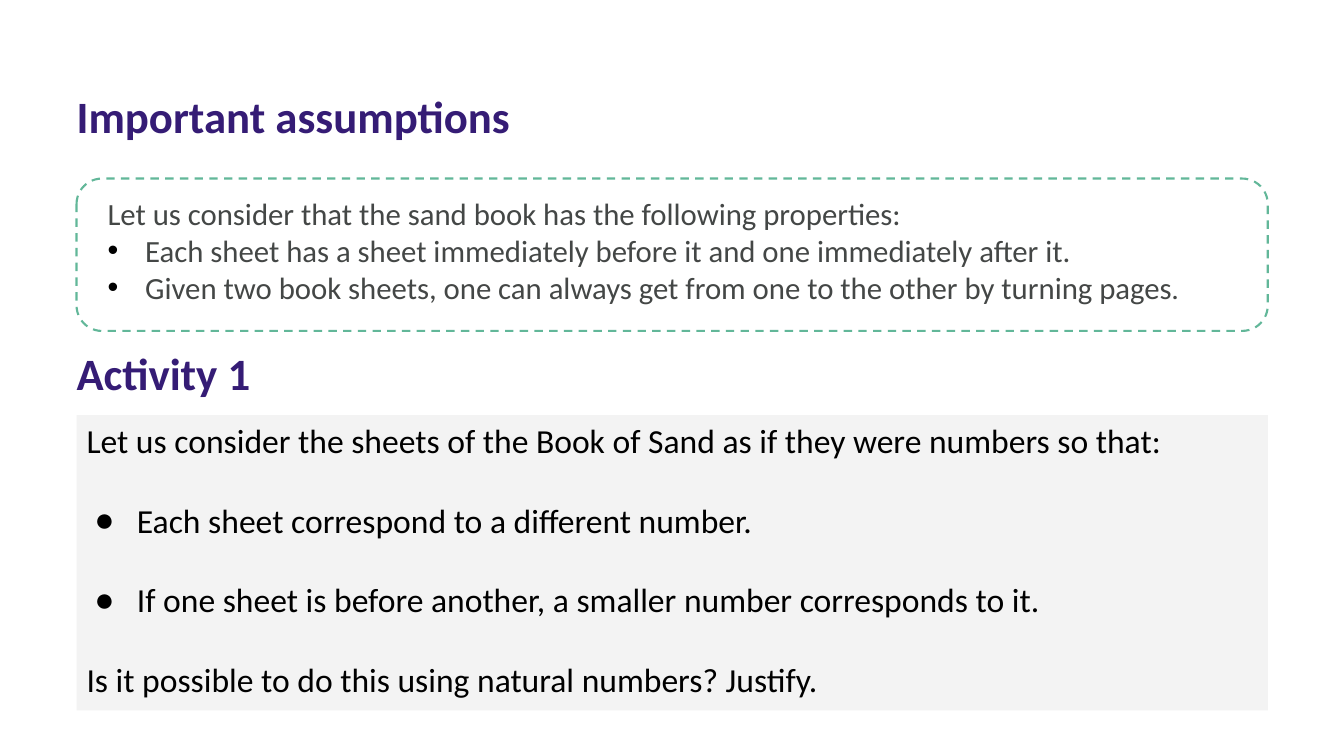
from lxml import etree
from pptx import Presentation
from pptx.dml.color import RGBColor
from pptx.enum.dml import MSO_LINE
from pptx.enum.shapes import MSO_SHAPE
from pptx.enum.text import MSO_ANCHOR, MSO_AUTO_SIZE, PP_ALIGN
from pptx.oxml.ns import qn
from pptx.util import Cm, Pt

PURPLE = RGBColor(0x35, 0x1C, 0x75)
BLACK = RGBColor(0x00, 0x00, 0x00)
GREY = RGBColor(0x44, 0x47, 0x46)
PALE = RGBColor(0xF3, 0xF3, 0xF3)
GREEN = RGBColor(0x62, 0xB7, 0x99)
ROUNDED = MSO_SHAPE.ROUNDED_RECTANGLE
DASH = MSO_LINE.DASH
TOP = MSO_ANCHOR.TOP
NO_FIT = MSO_AUTO_SIZE.NONE
LEFT, JUSTIFY = PP_ALIGN.LEFT, PP_ALIGN.JUSTIFY

ASSUMPTIONS_TITLE = [("", LEFT, ["Important assumptions"])]
ACTIVITY_TITLE = [("", LEFT, ["Activity 1"])]
ASSUMPTIONS = [
    ("", LEFT, ["Let us consider that the sand book has the following properties:"]),
    ("•", LEFT, ["Each sheet has a sheet immediately before it and one immediately after it."]),
    ("•", LEFT, ["Given two book sheets, one can always get from one to the other by turning pages", "."]),
]
ACTIVITY = [
    ("", LEFT, ["Let us consider the sheets of the Book of Sand as if they were numbers so that:"]),
    ("●", LEFT, ["Each sheet correspond to a different number."]),
    ("●", LEFT, ["If one sheet is before another, a smaller number corresponds to it."]),
    ("", JUSTIFY, ["Is it possible to do this using natural numbers? Justify."]),
]

FONTS = ["Calibri", "Karla"]
HEADING = {"size": Pt(32), "bold": True, "color": PURPLE}
PROPERTY = {"size": Pt(22), "bold": False, "color": GREY}
TASK = {"size": Pt(24), "bold": False, "color": BLACK}

PANEL_LEFT, PANEL_WIDTH = Cm(1.93), Cm(30.02)
INSET_X, INSET_Y = Cm(0.25), Cm(0.13)
HEADING_LEFT = PANEL_LEFT - INSET_X
HEADING_WIDTH, HEADING_HEIGHT = Cm(26.72), Cm(1.63)


def place(shape, left, top, width, height):
    shape.left, shape.top, shape.width, shape.height = left, top, width, height


def set_bullet(para, mark, margin, hang):
    props = para._p.get_or_add_pPr()
    props.set("marL", str(margin if mark else 0))
    props.set("indent", str(-hang if mark else 0))
    if mark:
        color = etree.SubElement(props, qn("a:buClr"))
        etree.SubElement(color, qn("a:srgbClr"), val=str(BLACK))
        etree.SubElement(props, qn("a:buChar"), char=mark)
    else:
        etree.SubElement(props, qn("a:buNone"))


def write(shape, lines, style, gap=0, margin=0, hang=0):
    frame = shape.text_frame
    settings = {
        "margin_left": INSET_X, "margin_right": INSET_X,
        "margin_top": INSET_Y, "margin_bottom": INSET_Y,
        "word_wrap": True, "auto_size": NO_FIT, "vertical_anchor": TOP,
    }
    for name, value in settings.items():
        setattr(frame, name, value)
    for number, (mark, align, pieces) in enumerate(lines):
        para = frame.add_paragraph() if number else frame.paragraphs[0]
        set_bullet(para, mark, margin, hang)
        para.alignment = align
        para.line_spacing = 1.0
        para.space_before = Pt(gap if number else 0)
        para.space_after = Pt(0)
        for piece, font in zip(pieces, FONTS):
            span = para.add_run()
            span.text = piece
            span.font.name = font
            span.font.size = style["size"]
            span.font.bold = style["bold"]
            span.font.color.rgb = style["color"]


def main():
    deck = Presentation()
    deck.slide_width, deck.slide_height = Cm(33.87), Cm(19.05)
    page = deck.slides.add_slide(deck.slide_layouts.get_by_name("Two Content"))
    title, assumptions, activity = list(page.placeholders)[:3]
    for extra in list(page.placeholders)[3:]:
        extra.element.getparent().remove(extra.element)

    place(title, HEADING_LEFT, Cm(2.11), HEADING_WIDTH, HEADING_HEIGHT)
    write(title, ASSUMPTIONS_TITLE, HEADING)

    place(assumptions, Cm(2.46), Cm(4.78), PANEL_WIDTH, Cm(3.07))
    write(assumptions, ASSUMPTIONS, PROPERTY, margin=Cm(0.95), hang=Cm(0.95))

    place(activity, PANEL_LEFT, Cm(10.46), PANEL_WIDTH, Cm(7.44))
    activity.fill.solid()
    activity.fill.fore_color.rgb = PALE
    write(activity, ACTIVITY, TASK, gap=28, margin=Cm(1.27), hang=Cm(1.07))

    heading = page.shapes.add_textbox(HEADING_LEFT, Cm(8.59), HEADING_WIDTH, HEADING_HEIGHT)
    write(heading, ACTIVITY_TITLE, HEADING)

    frame = page.shapes.add_shape(ROUNDED, PANEL_LEFT, Cm(4.5), PANEL_WIDTH, Cm(3.84))
    frame.shadow.inherit = False
    frame.fill.background()
    frame.line.color.rgb = GREEN
    frame.line.width = Pt(1.5)
    frame.line.dash_style = DASH

    deck.save("out.pptx")


if __name__ == "__main__":
    main()
